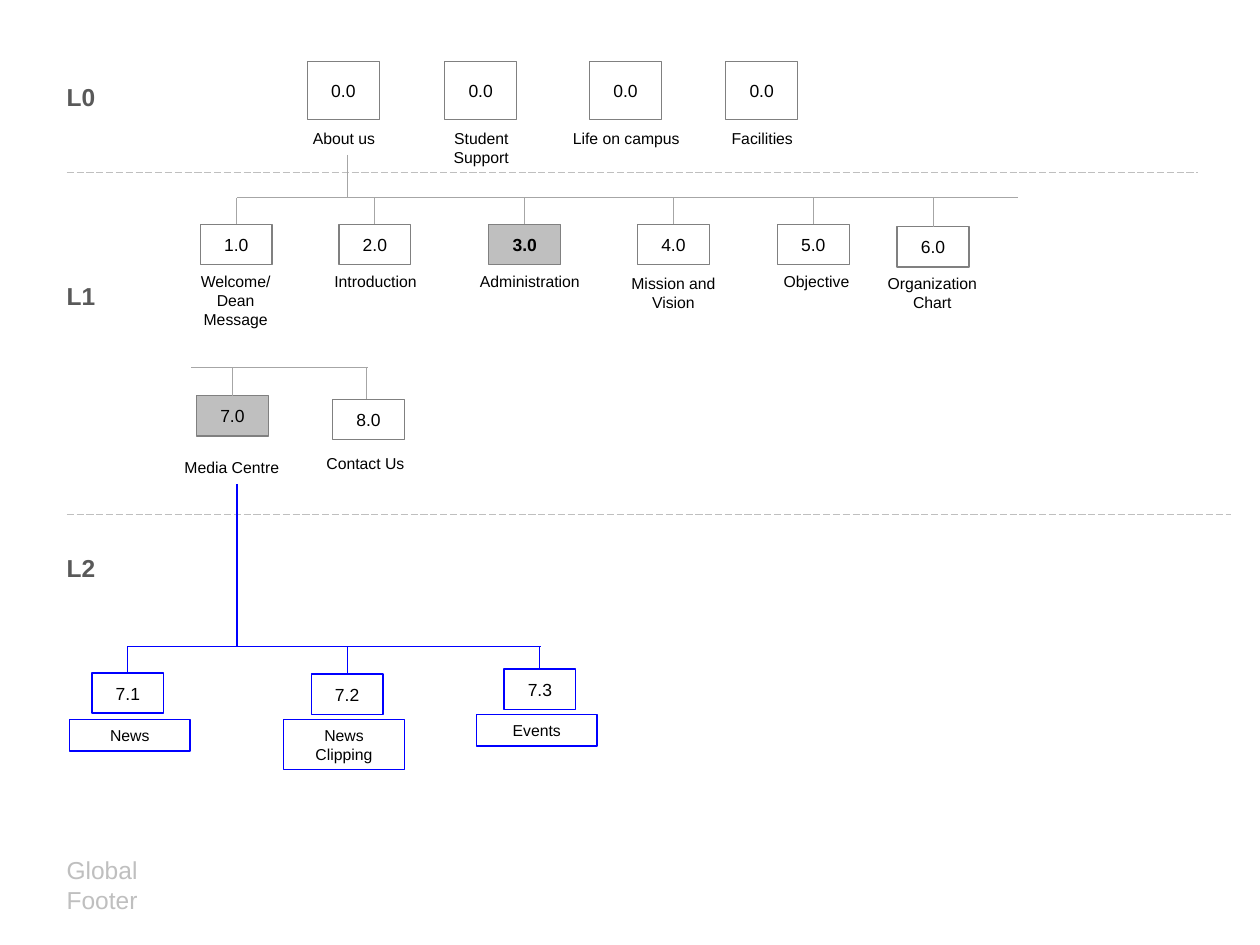
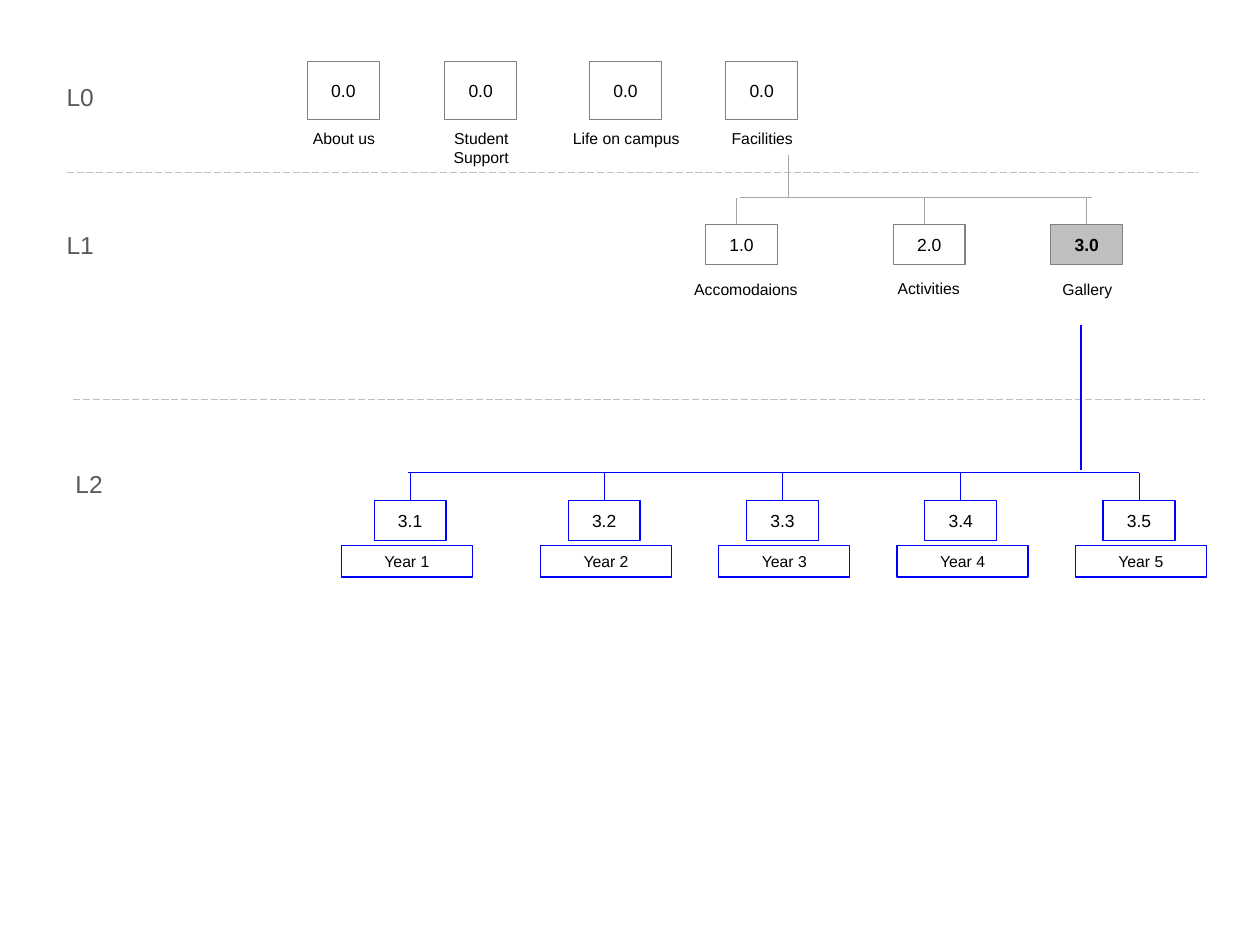
from dataclasses import dataclass

from lxml import etree
from pptx import Presentation
from pptx.dml.color import RGBColor
from pptx.enum.dml import MSO_LINE
from pptx.enum.shapes import MSO_CONNECTOR, MSO_SHAPE
from pptx.enum.text import MSO_ANCHOR, PP_ALIGN
from pptx.oxml.ns import qn
from pptx.util import Inches, Pt

RECT = MSO_SHAPE.RECTANGLE
STRAIGHT = MSO_CONNECTOR.STRAIGHT
LONG_DASH = MSO_LINE.LONG_DASH
TOP, MIDDLE = MSO_ANCHOR.TOP, MSO_ANCHOR.MIDDLE
LEFT, CENTER = PP_ALIGN.LEFT, PP_ALIGN.CENTER

BLACK = RGBColor(0x00, 0x00, 0x00)
HEADING = RGBColor(0x59, 0x59, 0x59)
BOX_GRAY = RGBColor(0x80, 0x80, 0x80)
TREE_GRAY = RGBColor(0xA6, 0xA6, 0xA6)
PALE_GRAY = RGBColor(0xBF, 0xBF, 0xBF)
BLUE = RGBColor(0x00, 0x00, 0xFF)

FONT = "Arial"
BOX_W, BOX_H, HOME_H = 0.57, 0.32, 0.46
THIN, MEDIUM = 0.5, 0.75
YEAR_PITCH = 1.415


@dataclass
class Page:
    """A numbered box with its caption; lengths in inches."""
    number: str
    caption: str
    left: float
    top: float
    caption_left: float
    caption_top: float
    caption_w: float = 0.96
    caption_lines: int = 1
    shaded: bool = False
    bold: bool = False
    stem_shift: float = 0


@dataclass
class Branch:
    """Pages hanging from one horizontal bar (left, right, y)."""
    bar: tuple
    pages: list
    blue: bool = False


HOME_PAGES = [
    Page("0.0", "About us", 2.44, 0.49, 2.13, 0.97, 1.2),
    Page("0.0", "Student Support", 3.53, 0.49, 3.34, 0.97, caption_lines=2),
    Page("0.0", "Life on campus", 4.68, 0.49, 4.37, 0.97, 1.2),
    Page("0.0", "Facilities", 5.76, 0.49, 5.57, 0.97),
]

ABOUT_US = {
    "bold_levels": True,
    "levels": [("L0", 0.43, 0.6), ("L1", 0.43, 2.18), ("L2", 0.43, 4.34)],
    "dividers": [(0.53, 9.51, 1.37), (0.53, 9.77, 4.08)],
    "trunks": [(2.76, 1.23, 1.57, TREE_GRAY, THIN), (1.88, 3.84, 5.13, BLUE, MEDIUM)],
    "footer": "Global Footer",
    "branches": [
        Branch((1.88, 8.08, 1.57), [
            Page("1.0", "Welcome/ Dean Message", 1.59, 1.78, 1.39, 2.11, caption_lines=3),
            Page("2.0", "Introduction", 2.69, 1.78, 2.5, 2.11),
            Page("3.0", "Administration", 3.88, 1.78, 3.67, 2.11, 1.07, shaded=True, bold=True),
            Page("4.0", "Mission and Vision", 5.06, 1.78, 4.81, 2.12, 1.07, 2),
            Page("5.0", "Objective", 6.17, 1.78, 5.84, 2.11, 1.28),
            Page("6.0", "Organization Chart", 7.12, 1.8, 6.92, 2.12, caption_lines=2),
        ]),
        Branch((1.52, 2.92, 2.92), [
            Page("7.0", "Media Centre", 1.56, 3.14, 1.36, 3.58, shaded=True),
            Page("8.0", "Contact Us", 2.64, 3.17, 2.42, 3.55, stem_shift=-0.02),
        ]),
        Branch((1.01, 4.29, 5.13), [
            Page("7.1", "News", 0.73, 5.34, 0.55, 5.71),
            Page("7.2", "News Clipping", 2.47, 5.35, 2.25, 5.71, caption_lines=2),
            Page("7.3", "Events", 4, 5.31, 3.78, 5.67),
        ], blue=True),
    ],
}

FACILITIES = {
    "bold_levels": False,
    "levels": [("L0", 0.43, 0.6), ("L1", 0.43, 1.78), ("L2", 0.5, 3.67)],
    "dividers": [(0.53, 9.51, 1.37), (0.58, 9.56, 3.17)],
    "trunks": [(6.26, 1.23, 1.57, TREE_GRAY, THIN), (8.58, 2.58, 3.73, BLUE, MEDIUM)],
    "footer": None,
    "branches": [
        Branch((5.87, 8.67, 1.57), [
            Page("1.0", "Accomodaions", 5.6, 1.78, 5.33, 2.17, 1.18, stem_shift=-0.04),
            Page("2.0", "Activities", 7.09, 1.78, 6.83, 2.16, 1.08, stem_shift=-0.04),
            Page("3.0", "Gallery", 8.34, 1.78, 8.09, 2.17, 1.08, shaded=True, bold=True),
        ]),
        Branch((3.24, 9.04, 3.75), [
            Page("3.1", "Year 1", 2.97, 3.97, 2.71, 4.33, 1.04),
        ] + [
            Page(f"3.{i + 2}", f"Year {i + 2}", 4.51 + i * YEAR_PITCH, 3.97,
                 4.29 + i * YEAR_PITCH, 4.33, 1.04)
            for i in range(4)
        ], blue=True),
    ],
}


def write(sp, text, size, color=BLACK, bold=False, align=CENTER, anchor=TOP):
    tf = sp.text_frame
    tf.word_wrap = True
    tf.vertical_anchor = anchor
    p = tf.paragraphs[0]
    p.alignment = align
    r = p.add_run()
    r.text = text
    r.font.name, r.font.size, r.font.bold = FONT, Pt(size), bold
    r.font.color.rgb = color


def add_box(slide, at, outline=None, width=0, fill=None):
    sp = slide.shapes.add_shape(RECT, *map(Inches, at))
    sp.shadow.inherit = False
    if fill is None:
        sp.fill.background()
    else:
        sp.fill.solid()
        sp.fill.fore_color.rgb = fill
    sp.line.color.rgb = outline
    sp.line.width = Pt(width)
    return sp


def add_line(slide, start, end, color, width=THIN):
    line = slide.shapes.add_connector(STRAIGHT, *map(Inches, (*start, *end)))
    line.line.color.rgb = color
    line.line.width = Pt(width)
    etree.SubElement(line._element.spPr, qn("a:effectLst"))
    return line


def add_text(slide, text, at, size, **style):
    write(slide.shapes.add_textbox(*map(Inches, at)), text, size, **style)


def add_page(slide, page, height=BOX_H, blue=False):
    box = add_box(slide, (page.left, page.top, BOX_W, height),
                  BLUE if blue else BOX_GRAY, fill=PALE_GRAY if page.shaded else None)
    write(box, page.number, 10, bold=page.bold, anchor=MIDDLE)
    at = (page.caption_left, page.caption_top, page.caption_w,
          0.1 + 0.15 * page.caption_lines)
    if blue:
        write(add_box(slide, at, BLUE, MEDIUM), page.caption, 9)
    else:
        add_text(slide, page.caption, at, 9)
    return box


def add_branch(slide, branch):
    left, right, y = branch.bar
    color = BLUE if branch.blue else TREE_GRAY
    add_line(slide, (left, y), (right, y), color, MEDIUM if branch.blue else THIN)
    for page in branch.pages:
        box = add_page(slide, page, blue=branch.blue)
        x = page.left + BOX_W / 2 + page.stem_shift
        stem = add_line(slide, (x, y), (x, page.top), color)
        if not page.stem_shift:
            stem.end_connect(box, 0)


def add_site_map(prs, site):
    slide = prs.slides.add_slide(prs.slide_layouts[6])
    for level, left, top in site["levels"]:
        add_text(slide, level, (left, top, 0.72, 0.34), 14,
                 color=HEADING, bold=site["bold_levels"], align=LEFT)
    for left, right, y in site["dividers"]:
        add_line(slide, (left, y), (right, y), PALE_GRAY).line.dash_style = LONG_DASH
    for page in HOME_PAGES:
        add_page(slide, page, HOME_H)
    for x, top, bottom, color, width in site["trunks"]:
        add_line(slide, (x, top), (x, bottom), color, width)
    for branch in site["branches"]:
        add_branch(slide, branch)
    if site["footer"]:
        add_text(slide, site["footer"], (0.43, 6.74, 0.91, 0.57), 14,
                 color=PALE_GRAY, align=LEFT)


def main():
    prs = Presentation()
    prs.slide_width, prs.slide_height = Inches(10), Inches(7.5)
    for site in (ABOUT_US, FACILITIES):
        add_site_map(prs, site)
    prs.save("out.pptx")


if __name__ == "__main__":
    main()
